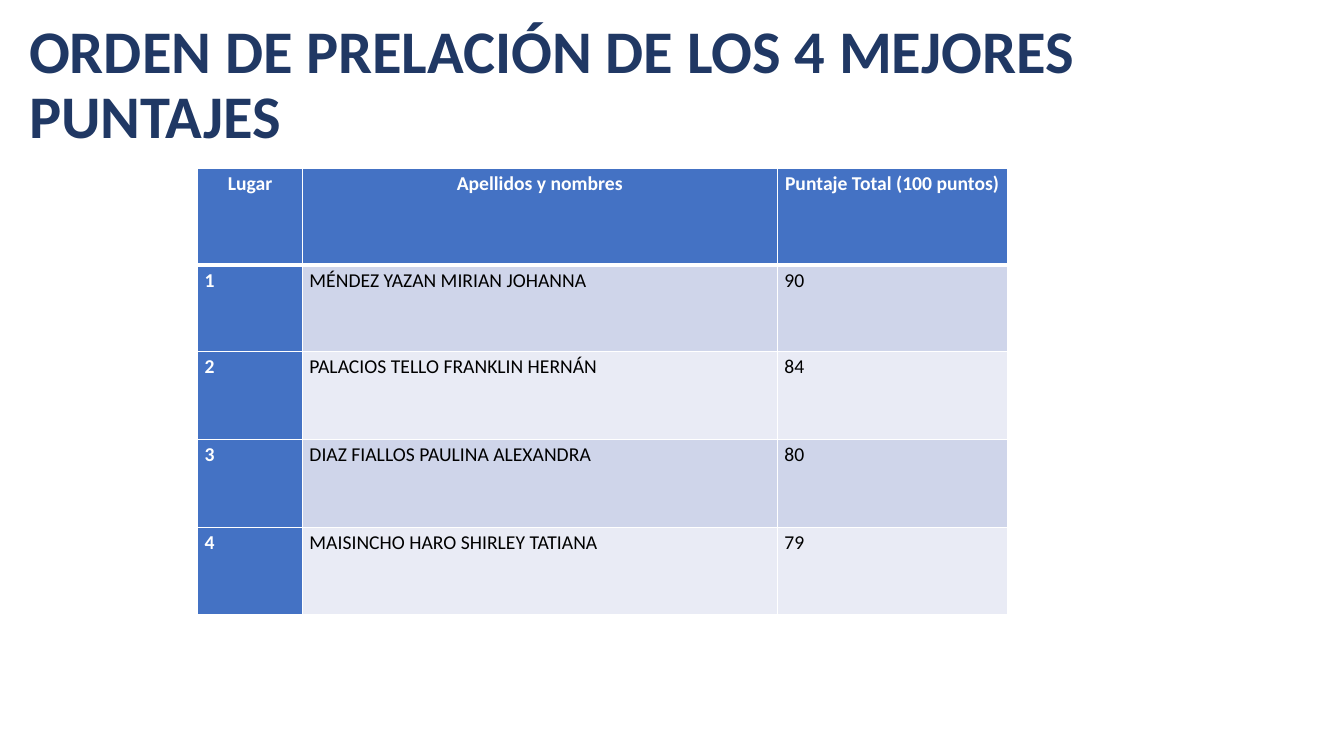
from dataclasses import dataclass

from lxml import etree
from pptx import Presentation
from pptx import util as u
from pptx.dml.color import RGBColor
from pptx.enum import text
from pptx.oxml import ns

PX = 9144  # EMU per px, 100 px to the inch

WHITE = RGBColor(0xFF, 0xFF, 0xFF)
BLACK = RGBColor(0x00, 0x00, 0x00)
NAVY = RGBColor(0x20, 0x38, 0x64)
BLUE = RGBColor(0x44, 0x72, 0xC4)
BANDS = (RGBColor(0xCF, 0xD5, 0xEA), RGBColor(0xE9, 0xEB, 0xF5))

FONT = "Calibri"
COLUMN_WIDTHS = (104, 471, 228)
ROW_HEIGHTS = (96, 86, 87, 87, 87)
HEADINGS = ("Lugar", "Apellidos y nombres", "Puntaje Total (100 puntos)")


@dataclass(frozen=True)
class Candidate:
    name: str
    score: int


RANKING = (
    Candidate("MÉNDEZ YAZAN MIRIAN JOHANNA", 90),
    Candidate("PALACIOS TELLO FRANKLIN HERNÁN", 84),
    Candidate("DIAZ FIALLOS PAULINA ALEXANDRA", 80),
    Candidate("MAISINCHO HARO SHIRLEY TATIANA", 79),
)


def px(length: int) -> u.Emu:
    return u.Emu(length * PX)


def write(frame, wording: str, *, size: float, color: RGBColor, bold: bool,
          align, spacing: float) -> None:
    paragraph = frame.paragraphs[0]
    paragraph.alignment = align
    paragraph.line_spacing = spacing
    run = paragraph.add_run()
    run.text = wording
    run.font.name = FONT
    run.font.size = u.Pt(size)
    run.font.bold = bold
    run.font.color.rgb = color


def add_borders(cell, *, top: int, bottom: int) -> None:
    """Draw white borders; call before the fill, which must follow them in the XML."""
    properties = cell._tc.get_or_add_tcPr()
    for side, points in (("L", 1), ("R", 1), ("T", top), ("B", bottom)):
        border = etree.SubElement(properties, ns.qn(f"a:ln{side}"), w=str(u.Pt(points)))
        fill = etree.SubElement(border, ns.qn("a:solidFill"))
        etree.SubElement(fill, ns.qn("a:srgbClr"), val=str(WHITE))


def add_title(slide) -> None:
    frame = slide.shapes.add_textbox(px(19), px(34), px(1135), px(104)).text_frame
    frame.word_wrap = True
    frame.vertical_anchor = text.MSO_ANCHOR.MIDDLE
    write(frame, "ORDEN DE PRELACIÓN DE LOS 4 MEJORES PUNTAJES", size=43.2,
          color=NAVY, bold=True, align=text.PP_ALIGN.LEFT, spacing=0.9)


def add_ranking(slide) -> None:
    rows = [HEADINGS] + [(str(place), candidate.name, str(candidate.score))
                         for place, candidate in enumerate(RANKING, start=1)]
    table = slide.shapes.add_table(len(rows), len(HEADINGS), px(196), px(167),
                                   px(sum(COLUMN_WIDTHS)), px(sum(ROW_HEIGHTS))).table
    for column, width in zip(table.columns, COLUMN_WIDTHS):
        column.width = px(width)
    for row, height in zip(table.rows, ROW_HEIGHTS):
        row.height = px(height)

    for r, wordings in enumerate(rows):
        for c, wording in enumerate(wordings):
            cell = table.cell(r, c)
            is_heading = r == 0
            is_label = is_heading or c == 0
            cell.margin_left = cell.margin_right = px(7)
            cell.margin_top = cell.margin_bottom = 0
            add_borders(cell, top=3 if r == 1 else 1, bottom=3 if is_heading else 1)
            cell.fill.solid()
            cell.fill.fore_color.rgb = BLUE if is_label else BANDS[(r - 1) % 2]
            write(cell.text_frame, wording, size=14,
                  color=WHITE if is_label else BLACK, bold=is_label,
                  align=text.PP_ALIGN.CENTER if is_heading else text.PP_ALIGN.JUSTIFY,
                  spacing=1.15)


def main() -> None:
    deck = Presentation()
    deck.slide_width, deck.slide_height = px(1333), px(750)
    slide = deck.slides.add_slide(deck.slide_layouts[6])
    add_title(slide)
    add_ranking(slide)
    deck.save("out.pptx")


if __name__ == "__main__":
    main()
